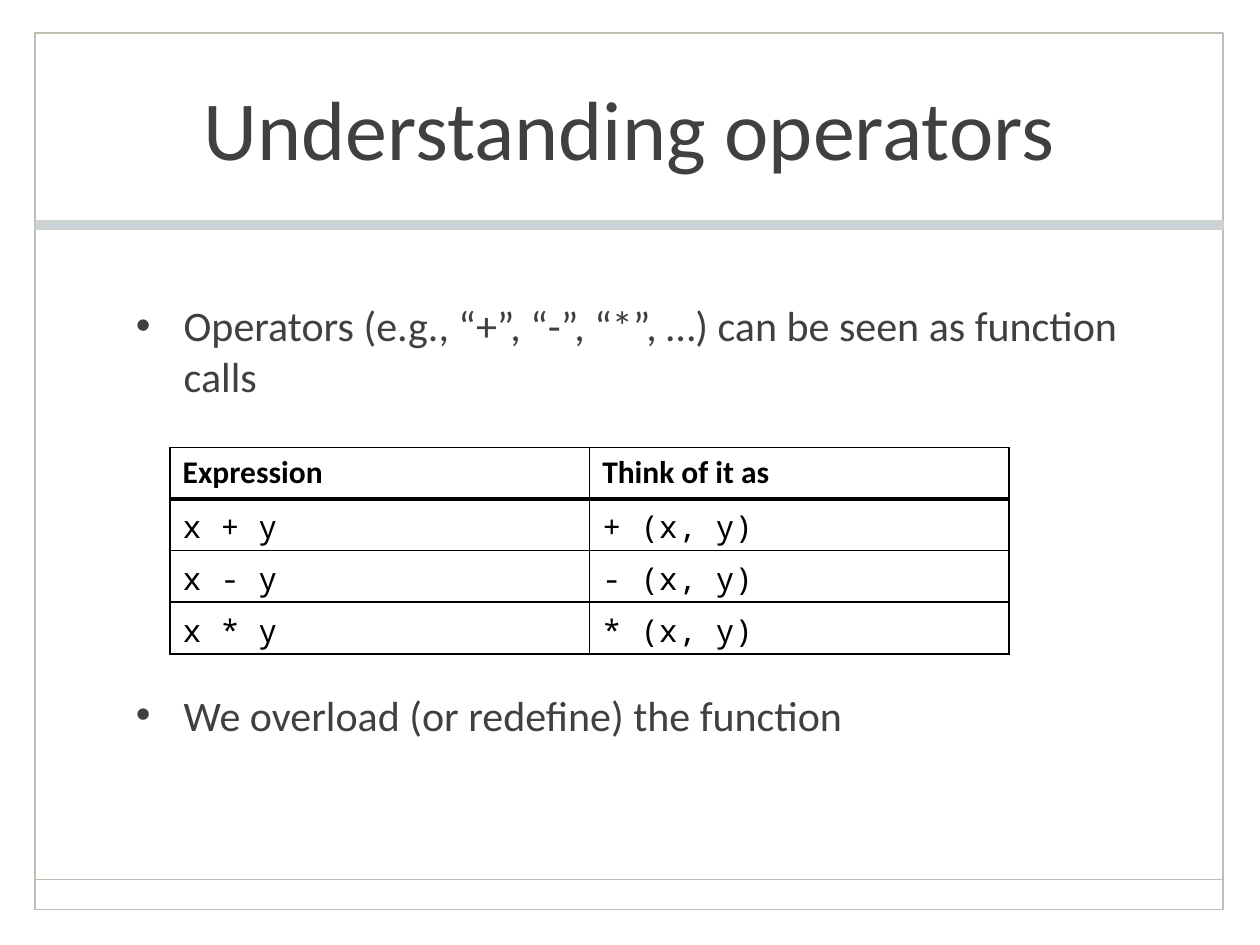
"""Build the slide that explains operators as function calls."""
from pptx import Presentation
from pptx.dml.color import RGBColor
from pptx.enum.shapes import MSO_CONNECTOR, MSO_SHAPE
from pptx.enum.text import MSO_ANCHOR, PP_ALIGN
from pptx.oxml.ns import qn
from pptx.util import Inches, Pt
from lxml import etree

RECT = MSO_SHAPE.RECTANGLE
LINE = MSO_CONNECTOR.STRAIGHT
MIDDLE = MSO_ANCHOR.MIDDLE
CENTER = PP_ALIGN.CENTER

SANS, MONO = "Calibri", "Noto Sans Mono"
INK, BLACK, WHITE = "404040", "000000", "FFFFFF"
FRAME, BAND, EDGE = "BEBDB2", "CBD2D5", "D1D0C8"

TITLE = "Understanding operators"
POINTS = [
    ("Operators (e.g., “+”, “-”, “*”, …) can be seen as function calls", 0),
    ("We overload (or redefine) the function", 165),
]
ROWS = [
    ("Expression", "Think of it as"),
    ("x + y", "+ (x, y)"),
    ("x - y", "- (x, y)"),
    ("x * y", "* (x, y)"),
]

LEFT, WIDE = 0.28, 9.43
INNER, SPAN = 0.98, 8.03
COL, ROW = 3.33, 0.41


def color(code):
    return RGBColor.from_string(code)


def style(para, size, face=SANS, code=INK, bold=False):
    for run in para.runs:
        font = run.font
        font.name, font.size, font.bold = face, Pt(size), bold
        font.color.rgb = color(code)


def box(slide, top, high, line, width, fill=None):
    shape = slide.shapes.add_shape(
        RECT, Inches(LEFT), Inches(top), Inches(WIDE), Inches(high))
    shape.shadow.inherit = False
    if fill:
        shape.fill.solid()
        shape.fill.fore_color.rgb = color(fill)
    else:
        shape.fill.background()
    shape.line.color.rgb = color(line)
    shape.line.width = Pt(width)


def rule(slide, top):
    line = slide.shapes.add_connector(
        LINE, Inches(LEFT), Inches(top), Inches(LEFT + WIDE), Inches(top))
    line.line.color.rgb = color(FRAME)
    line.line.width = Pt(1)
    etree.SubElement(line._element.spPr, qn("a:effectLst"))


def text(slide, top, high):
    area = slide.shapes.add_textbox(
        Inches(INNER), Inches(top), Inches(SPAN), Inches(high))
    area.text_frame.word_wrap = True
    return area.text_frame


def bullet(para):
    props = para._p.get_or_add_pPr()
    props.set("marL", str(Inches(0.38)))
    props.set("indent", str(Inches(-0.38)))
    tint = etree.SubElement(props, qn("a:buClr"))
    etree.SubElement(tint, qn("a:srgbClr"), val=INK)
    etree.SubElement(props, qn("a:buFont"), typeface="Arial")
    etree.SubElement(props, qn("a:buChar"), char="•")


def border(cell, side, width):
    line = etree.SubElement(
        cell._tc.get_or_add_tcPr(), qn("a:ln" + side), w=str(Pt(width)))
    fill = etree.SubElement(line, qn("a:solidFill"))
    etree.SubElement(fill, qn("a:srgbClr"), val=BLACK)


def grid(slide):
    count, cols = len(ROWS), len(ROWS[0])
    table = slide.shapes.add_table(
        count, cols, Inches(1.35), Inches(3.55),
        Inches(COL * cols), Inches(ROW * count)).table
    for col in table.columns:
        col.width = Inches(COL)
    for r, row in enumerate(ROWS):
        table.rows[r].height = Inches(ROW)
        for c, word in enumerate(row):
            cell = table.cell(r, c)
            cell.text = word
            head = r == 0
            style(cell.text_frame.paragraphs[0], 18,
                  SANS if head else MONO, BLACK, head)
            for side in "LRTB":
                thick = (r, side) in ((0, "B"), (1, "T"))
                border(cell, side, 3 if thick else 1)
            cell.fill.solid()
            cell.fill.fore_color.rgb = color(WHITE)


def main():
    deck = Presentation()
    deck.slide_width, deck.slide_height = Inches(10), Inches(7.5)
    slide = deck.slides.add_slide(deck.slide_layouts[6])

    box(slide, 0.26, 6.96, FRAME, 1)
    rule(slide, 6.98)
    box(slide, 1.75, 0.07, EDGE, 0.25, BAND)

    title = text(slide, 0.27, 1.47)
    title.text = TITLE
    title.vertical_anchor = MIDDLE
    title.paragraphs[0].alignment = CENTER
    style(title.paragraphs[0], 48)

    body = text(slide, 2.33, 4.3)
    body.text = "\n".join(words for words, gap in POINTS)
    for para, (words, gap) in zip(body.paragraphs, POINTS):
        bullet(para)
        if gap:
            para.space_before = Pt(gap)
        style(para, 24)

    grid(slide)
    deck.save("out.pptx")


if __name__ == "__main__":
    main()
